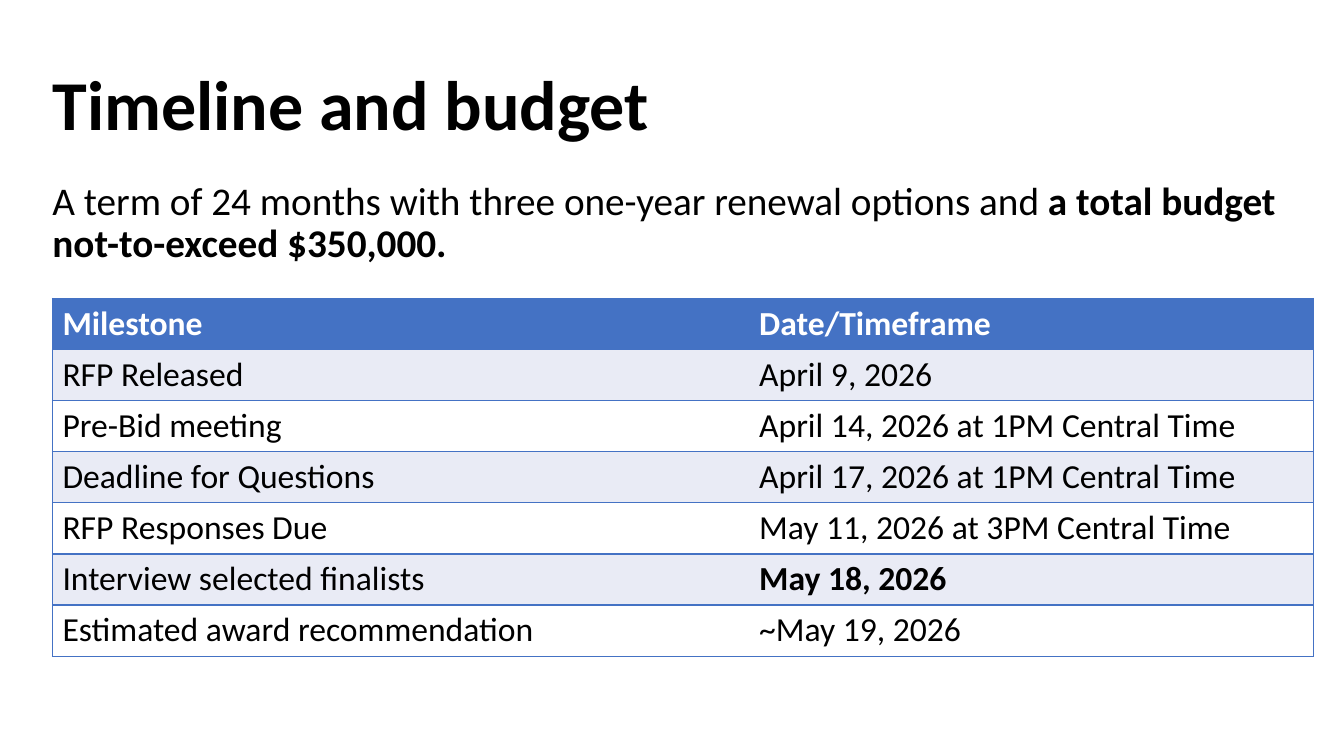
import pptx
import pptx.dml.color
import pptx.enum.text
import pptx.oxml
import pptx.oxml.ns
import pptx.util
from pptx.util import Inches

FONT = "Calibri"
BLACK, WHITE, BLUE, BAND = "000000", "FFFFFF", "4472C4", "E9EBF5"
MILESTONES = [
    ("Milestone", "Date/Timeframe"),
    ("RFP Released", "April 9, 2026"),
    ("Pre-Bid meeting", "April 14, 2026 at 1PM Central Time"),
    ("Deadline for Questions", "April 17, 2026 at 1PM Central Time"),
    ("RFP Responses Due", "May 11, 2026 at 3PM Central Time"),
    ("Interview selected finalists", "May 18, 2026"),
    ("Estimated award recommendation", "~May 19, 2026"),
]
BOLD_DATE = "May 18, 2026"


def rgb(color):
    return pptx.dml.color.RGBColor.from_string(color)


def add_run(p, text, size, color=BLACK, bold=False):
    r = p.add_run()
    r.text = text
    r.font.name = FONT
    r.font.size = pptx.util.Pt(size)
    r.font.bold = bold
    r.font.color.rgb = rgb(color)


def fill_placeholder(sp, box, size, runs):
    """Move a placeholder to box and give it one plain left-aligned paragraph."""
    sp.left, sp.top, sp.width, sp.height = map(Inches, box)
    tf = sp.text_frame
    tf.word_wrap = True
    tf.auto_size = pptx.enum.text.MSO_AUTO_SIZE.NONE
    tf.vertical_anchor = pptx.enum.text.MSO_ANCHOR.TOP
    p = tf.paragraphs[0]
    pPr = p._p.get_or_add_pPr()
    pPr.set("marL", "0")
    pPr.set("indent", "0")
    pPr.append(pptx.oxml.parse_xml(f'<a:buNone {pptx.oxml.ns.nsdecls("a")}/>'))
    p.alignment = pptx.enum.text.PP_ALIGN.LEFT
    p.line_spacing = 0.9
    p.space_before = pptx.util.Pt(0)
    for text, bold in runs:
        add_run(p, text, size, bold=bold)


def set_borders(cell, visible):
    """Draw the visible sides (of L, R, T, B) in blue and hide the others."""
    tcPr = cell._tc.get_or_add_tcPr()
    for side in "LRTB":
        paint = (f'<a:solidFill><a:srgbClr val="{BLUE}"/></a:solidFill>'
                 if side in visible else "<a:noFill/>")
        tcPr.append(pptx.oxml.parse_xml(
            f'<a:ln{side} {pptx.oxml.ns.nsdecls("a")} w="12700">{paint}</a:ln{side}>'))


def add_milestone_table(slide, box, col_widths):
    frame = slide.shapes.add_table(len(MILESTONES), len(col_widths), *map(Inches, box))
    table = frame.table
    table.horz_banding = False
    for column, width in zip(table.columns, col_widths):
        column.width = Inches(width)
    for i, row in enumerate(MILESTONES):
        header = i == 0
        fill = BLUE if header else BAND if i % 2 else WHITE
        for j, text in enumerate(row):
            cell = table.cell(i, j)
            set_borders(cell, "LTB" if j == 0 else "RTB")
            cell.fill.solid()
            cell.fill.fore_color.rgb = rgb(fill)
            add_run(cell.text_frame.paragraphs[0], text, 24,
                    WHITE if header else BLACK, header or text == BOLD_DATE)


def add_timeline_slide(prs):
    slide = prs.slides.add_slide(prs.slide_layouts[1])
    left, width = 0.42, 12.39
    fill_placeholder(slide.shapes.title, (left, 0.64, width, 1.46), 50,
                     [("Timeline and budget", True)])
    fill_placeholder(slide.placeholders[1], (left, 1.75, width, 0.97), 28, [
        ("A term of 24 months with three one-year renewal options and ", False),
        ("a total budget not-to-exceed $350,000.", True),
    ])
    add_milestone_table(slide, (left + 0.1, 2.96, 12.51, 3.5), (6.91, 5.6))


def main():
    prs = pptx.Presentation()
    prs.slide_width, prs.slide_height = Inches(13.33), Inches(7.5)
    add_timeline_slide(prs)
    prs.save("out.pptx")


if __name__ == "__main__":
    main()
